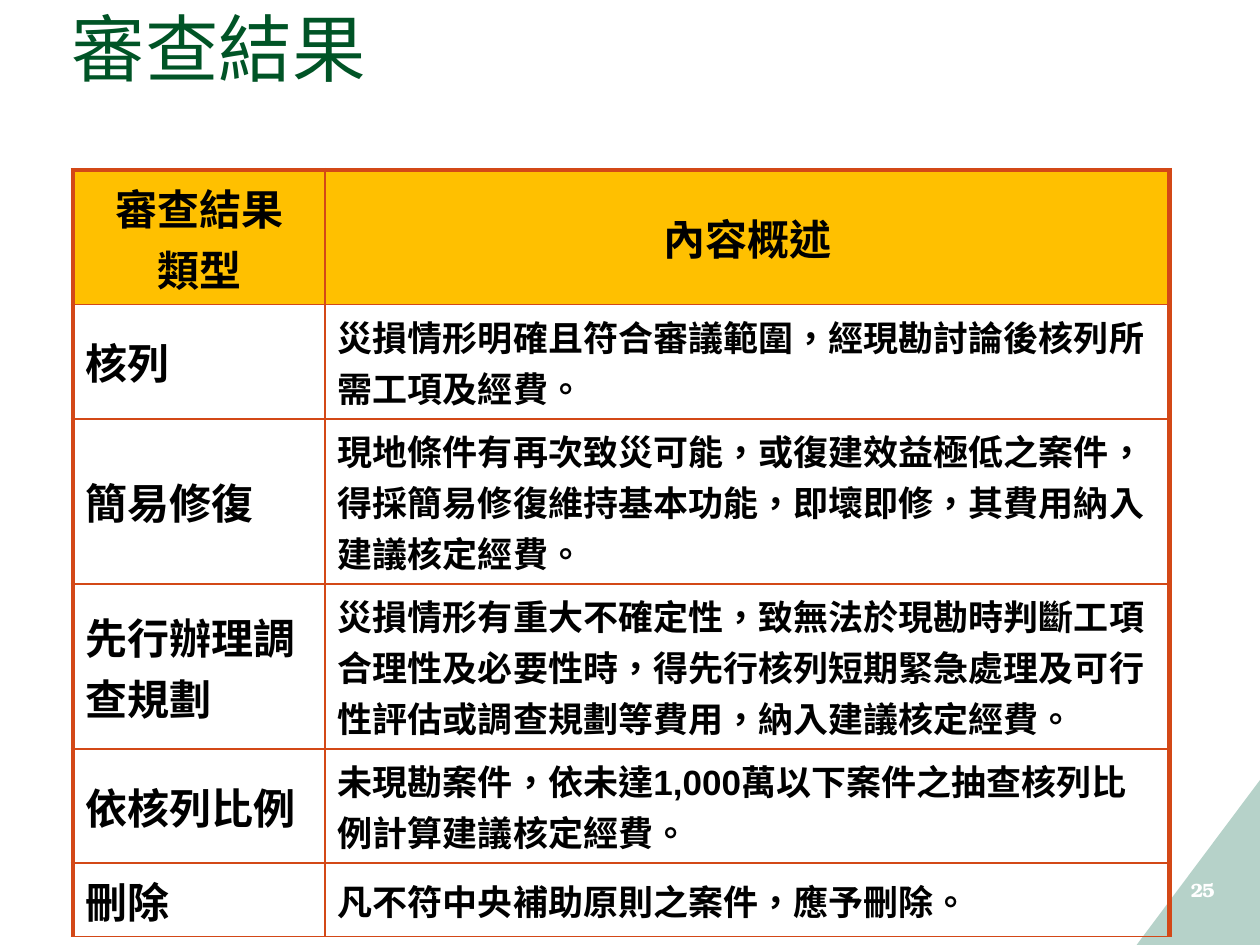
import pptx
import pptx.dml.color
import pptx.enum.shapes
import pptx.enum.text
import pptx.oxml.ns
import pptx.util
from lxml import etree

GREEN = pptx.dml.color.RGBColor(0x00, 0x54, 0x26)
SAGE = pptx.dml.color.RGBColor(0xB6, 0xD2, 0xC9)
AMBER = pptx.dml.color.RGBColor(0xFF, 0xC0, 0x00)
RUST = pptx.dml.color.RGBColor(0xD3, 0x48, 0x17)
BLACK = pptx.dml.color.RGBColor(0x00, 0x00, 0x00)
WHITE = pptx.dml.color.RGBColor(0xFF, 0xFF, 0xFF)

MIDDLE = pptx.enum.text.MSO_ANCHOR.MIDDLE
LEFT = pptx.enum.text.PP_ALIGN.LEFT
CENTER = pptx.enum.text.PP_ALIGN.CENTER
inches = pptx.util.Inches
qn = pptx.oxml.ns.qn

HEADINGS = ("審查結果\n類型", "內容概述")
RESULTS = [
    ("核列", "災損情形明確且符合審議範圍，經現勘討論後核列所需工項及經費。"),
    ("簡易修復", "現地條件有再次致災可能，或復建效益極低之案件，得採簡易修復維持基本功能，"
     "即壞即修，其費用納入建議核定經費。"),
    ("先行辦理調查規劃", "災損情形有重大不確定性，致無法於現勘時判斷工項合理性及必要性時，"
     "得先行核列短期緊急處理及可行性評估或調查規劃等費用，納入建議核定經費。"),
    ("依核列比例", "未現勘案件，依未達1,000萬以下案件之抽查核列比例計算建議核定經費。"),
    ("刪除", "凡不符中央補助原則之案件，應予刪除。"),
]
COLUMN_SHARES = (0.23, 0.77)
ROW_HEIGHTS = (1.06, 0.9, 1.31, 1.31, 0.9, 0.58)


def add_text(paragraph, text, size, font, color, bold=False):
    """Add text run by run, with a line break at each newline."""
    for number, line in enumerate(text.split("\n")):
        if number:
            paragraph.add_line_break()
        run = paragraph.add_run()
        run.text = line
        run.font.size = pptx.util.Pt(size)
        run.font.name = font
        run.font.bold = bold
        run.font.color.rgb = color
        run._r.get_or_add_rPr().set("lang", "zh-TW")


def set_borders(cell, widths):
    """Draw the left, right, top and bottom borders with widths in points."""
    properties = cell._tc.get_or_add_tcPr()
    for side, width in zip("LRTB", widths):
        border = etree.SubElement(properties, qn(f"a:ln{side}"), w=str(pptx.util.Pt(width)))
        fill = etree.SubElement(border, qn("a:solidFill"))
        etree.SubElement(fill, qn("a:srgbClr"), val=str(RUST))


def place_title(slide, left, top, width, height):
    title = slide.shapes.title
    title.left, title.top, title.width, title.height = map(inches, (left, top, width, height))
    frame = title.text_frame
    frame.auto_size = pptx.enum.text.MSO_AUTO_SIZE.NONE
    frame.vertical_anchor = MIDDLE
    paragraph = frame.paragraphs[0]
    indent = inches(1.37)
    properties = paragraph._p.get_or_add_pPr()
    properties.set("marL", str(indent))
    properties.set("indent", str(-indent))
    paragraph.alignment = LEFT
    paragraph.line_spacing = pptx.util.Pt(40)
    add_text(paragraph, "審查結果", 42, "Arial Narrow", GREEN)


def place_results(slide, left, top, width):
    rows = [HEADINGS, *RESULTS]
    frame = slide.shapes.add_table(len(rows), len(HEADINGS), inches(left), inches(top),
                                   inches(width), inches(sum(ROW_HEIGHTS)))
    table = frame.table
    for column, share in zip(table.columns, COLUMN_SHARES):
        column.width = inches(width * share)
    for r, (row, height) in enumerate(zip(rows, ROW_HEIGHTS)):
        table.rows[r].height = inches(height)
        is_heading = r == 0
        for c, text in enumerate(row):
            cell = table.cell(r, c)
            is_first = c == 0
            set_borders(cell, (3 if is_first else 1, 1 if is_first else 3,
                               3 if is_heading else 1, 1))
            if is_heading:
                cell.fill.solid()
                cell.fill.fore_color.rgb = AMBER
            else:
                cell.fill.background()
            cell.vertical_anchor = MIDDLE
            paragraph = cell.text_frame.paragraphs[0]
            paragraph.alignment = CENTER if is_heading else LEFT
            size = 24 if is_heading or is_first else 20
            add_text(paragraph, text, size, "Arial", BLACK, bold=True)


def place_corner(slide, left, top, width, height):
    corner = slide.shapes.add_shape(pptx.enum.shapes.MSO_SHAPE.RIGHT_TRIANGLE,
                                    *map(inches, (left, top, width, height)))
    corner.rotation = 180
    corner._element.spPr.find(qn("a:xfrm")).set("flipV", "1")
    corner.shadow.inherit = False
    corner.fill.solid()
    corner.fill.fore_color.rgb = SAGE
    corner.line.fill.background()


def place_page_number(slide, left, top, width, height):
    box = slide.shapes.add_textbox(*map(inches, (left, top, width, height)))
    frame = box.text_frame
    frame.word_wrap = True
    frame.vertical_anchor = MIDDLE
    paragraph = frame.paragraphs[0]
    paragraph.alignment = CENTER
    add_text(paragraph, "25", 11, "TeX Gyre Bonum", WHITE, bold=True)
    paragraph.runs[0]._r.get_or_add_rPr().set("spc", "-70")


def main():
    presentation = pptx.Presentation()
    presentation.slide_width = inches(10)
    presentation.slide_height = inches(7.5)
    slide = presentation.slides.add_slide(presentation.slide_layouts.get_by_name("Title Only"))
    place_corner(slide, 9.02, 6.19, 0.98, 1.31)
    place_title(slide, 0.47, 0.06, 9, 0.78)
    place_results(slide, 0.58, 1.35, 8.7)
    place_page_number(slide, 9.28, 6.86, 0.53, 0.4)
    presentation.save("out.pptx")


if __name__ == "__main__":
    main()
